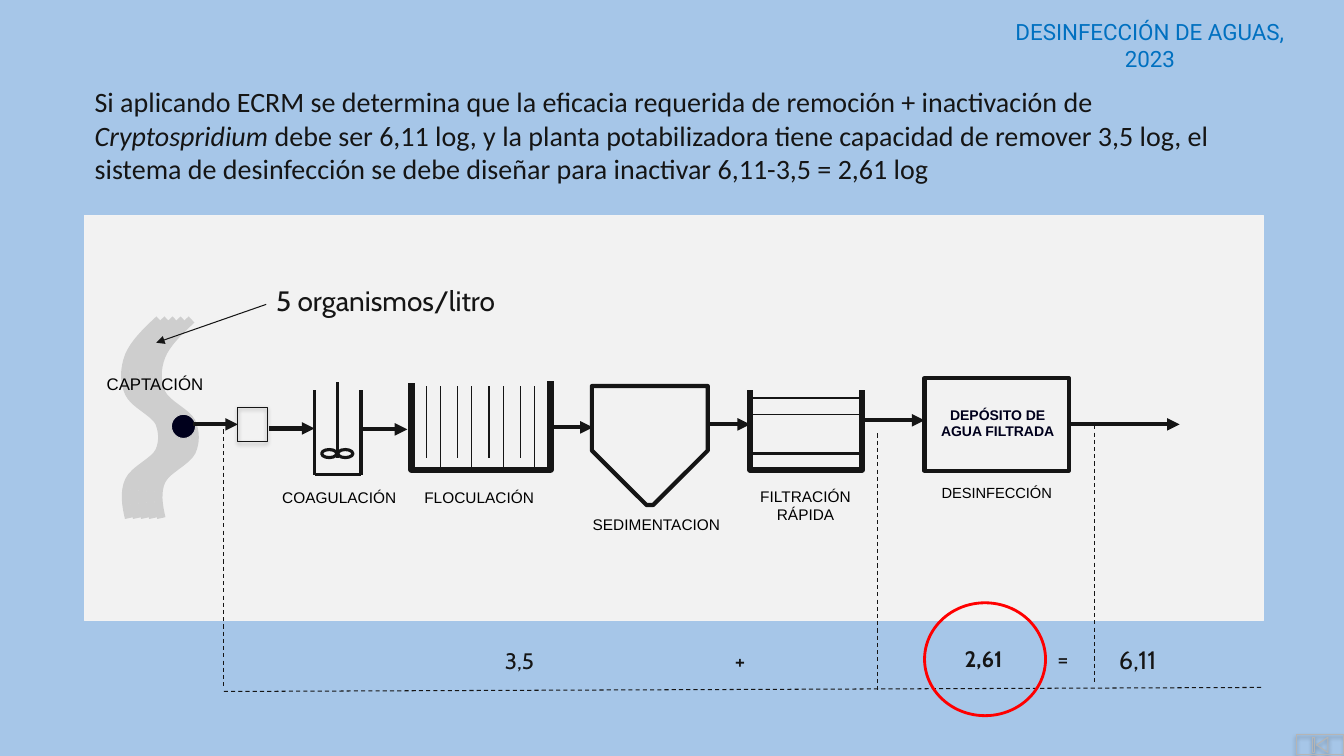
from lxml import etree
from pptx import Presentation
from pptx.dml.color import RGBColor
from pptx.enum import dml, shapes, text
from pptx.oxml import ns
from pptx.util import Inches, Pt

INK = "151515"
BLACK = "000000"
NAVY = "00001C"
RIVER = "CECECE"
PRESET = shapes.MSO_SHAPE
CENTER = text.PP_ALIGN.CENTER


def color(value):
    return RGBColor.from_string(value)


def add_element(parent, tag, **attributes):
    return etree.SubElement(parent, ns.qn(tag), attributes)


def style_outline(shape, line, width, fill=None):
    shape.shadow.inherit = False
    if fill:
        shape.fill.solid()
        shape.fill.fore_color.rgb = color(fill)
    else:
        shape.fill.background()
    shape.line.color.rgb = color(line)
    shape.line.width = Pt(width)


def add_box(slide, preset, bounds, width=0.75, line=INK, fill=None):
    shape = slide.shapes.add_shape(preset, *map(Inches, bounds))
    style_outline(shape, line, width, fill)
    return shape


def add_soft_shadow(shape):
    effects = shape._element.spPr.find(ns.qn("a:effectLst"))
    shadow = add_element(effects, "a:outerShdw", blurRad=str(Pt(3.1)), dist=str(Pt(1.6)),
                         dir="5400000", rotWithShape="0")
    shade = add_element(shadow, "a:srgbClr", val=BLACK)
    add_element(shade, "a:alpha", val="38000")


def add_line(slide, start, end, width=0.75, dashed=False, arrow=False):
    line = slide.shapes.add_connector(
        shapes.MSO_CONNECTOR.STRAIGHT, *map(Inches, (*start, *end)))
    line.line.color.rgb = color(INK)
    line.line.width = Pt(width)
    if dashed:
        line.line.dash_style = dml.MSO_LINE.DASH
    if arrow:
        add_element(line.line._get_or_add_ln(), "a:tailEnd", type="triangle")
    add_element(line._element.spPr, "a:effectLst")
    return line


def add_flow(slide, left, right, y):
    return add_line(slide, (left, y), (right, y), 3, arrow=True)


def add_outline(slide, points, width, line=INK):
    corners = [(Inches(x), Inches(y)) for x, y in points]
    builder = slide.shapes.build_freeform(*corners[0])
    builder.add_line_segments(corners[1:], close=False)
    shape = builder.convert_to_shape()
    style_outline(shape, line, width)
    return shape


def bend_into_curves(shape):
    outline = next(shape._element.iter(ns.qn("a:path")))
    segments = outline.findall(ns.qn("a:lnTo"))
    for start in range(0, len(segments), 3):
        curve = add_element(outline, "a:cubicBezTo")
        for segment in segments[start:start + 3]:
            curve.append(segment[0])
            outline.remove(segment)


def format_run(run, font, size, ink, bold=False, italic=False):
    run.font.name = font
    run.font.size = Pt(size)
    run.font.color.rgb = color(ink)
    run.font.bold = bold
    run.font.italic = italic


def add_label(slide, bounds, words, font, size, ink=INK, align=None, bold=False, tab=None):
    frame = slide.shapes.add_textbox(*map(Inches, bounds)).text_frame
    frame.word_wrap = True
    frame.text = words
    paragraph = frame.paragraphs[0]
    if align is not None:
        paragraph.alignment = align
    if tab:
        tabs = add_element(paragraph._p.get_or_add_pPr(), "a:tabLst")
        add_element(tabs, "a:tab", pos=str(Inches(tab)), algn="l")
    for run in paragraph.runs:
        format_run(run, font, size, ink, bold)
    return paragraph


def add_statement(slide):
    paragraph = add_label(
        slide, (0.84, 0.79, 11.69, 1.11),
        "Si aplicando ECRM se determina que la eficacia requerida de remoción + inactivación de ",
        "Calibri", 20)
    for words, italic in (
            ("Cryptospridium", True),
            (" debe ser 6,11 log, y la planta potabilizadora tiene capacidad de remover 3,5 log, "
             "el sistema de desinfección se debe diseñar para inactivar 6,11-3,5 = 2,61 log", False)):
        run = paragraph.add_run()
        run.text = words
        format_run(run, "Calibri", 20, INK, italic=italic)


def add_river(slide):
    bank = (
        (1.58, 3.17),
        (1.45, 3.29), (1.33, 3.41), (1.28, 3.53),
        (1.23, 3.66), (1.23, 3.79), (1.28, 3.9),
        (1.33, 4.01), (1.53, 4.09), (1.58, 4.19),
        (1.62, 4.29), (1.62, 4.39), (1.58, 4.48),
        (1.53, 4.58), (1.33, 4.66), (1.28, 4.77),
        (1.23, 4.88), (1.25, 5.01), (1.28, 5.14))
    for strand in (3, 4, 0, 1, 2):
        bend_into_curves(add_outline(slide, [(x + 0.08 * strand, y) for x, y in bank], 6, RIVER))
    add_box(slide, PRESET.OVAL, (1.7, 4.11, 0.24, 0.24), line=RIVER, fill=NAVY)


def add_coagulation(slide):
    add_line(slide, (3.12, 4.71), (3.58, 4.71), 2.25)
    for x in (3.12, 3.58):
        add_line(slide, (x, 3.87), (x, 4.71), 2.25)
    for x in (3.19, 3.35):
        add_box(slide, PRESET.OVAL, (x, 4.46, 0.15, 0.08), 2.25)
    add_line(slide, (3.35, 4.54), (3.35, 3.79), 2.25)


def add_flocculation(slide):
    for pair in range(4):
        x = 4.23 + 0.31 * pair
        add_line(slide, (x, 3.83), (x, 4.54))
        add_line(slide, (x + 0.14, 3.83), (x + 0.14, 4.66))
    add_outline(slide, [(4.08, 3.8), (4.08, 4.66), (5.46, 4.66), (5.46, 3.78)], 4.5)


def add_sedimentation(slide):
    tank = add_box(slide, PRESET.SNIP_2_SAME_RECTANGLE, (5.87, 3.83, 1.15, 1.18), 3)
    tank.rotation = 180
    tank.adjustments[0] = 0.471
    tank.adjustments[1] = 0


def add_filter(slide):
    for top, height, width in ((3.95, 0.55, 1), (4.5, 0.16, 2.25), (4.11, 0.39, 0.75)):
        add_box(slide, PRESET.RECTANGLE, (7.44, top, 1.1, height), width)
    add_outline(slide, [(7.44, 3.87), (7.44, 4.66), (8.55, 4.66), (8.55, 3.87)], 4.5)


def add_captions(slide):
    for bounds, words, size, align in (
            ((0.96, 3.66, 1.26, 0.3), "CAPTACIÓN", 12, None),
            ((2.7, 4.79, 1.42, 0.29), "COAGULACIÓN", 11, None),
            ((4.11, 4.79, 1.47, 0.29), "FLOCULACIÓN", 11, None),
            ((5.78, 5.06, 1.66, 0.29), "SEDIMENTACION", 11, None),
            ((7.28, 4.78, 1.42, 0.47), "FILTRACIÓN RÁPIDA", 11, CENTER),
            ((9.24, 4.75, 1.34, 0.28), "DESINFECCIÓN", 10.5, None)):
        add_label(slide, bounds, words, "Arial", size, BLACK, align)


def add_balance(slide):
    add_label(slide, (4.91, 6.37, 3.79, 0.37), "3,5\t+", "Cabin", 16, tab=2.28)
    paragraph = add_label(slide, (9.47, 6.35, 1.5, 0.37), "2,61", "Cabin", 16, bold=True, tab=0.92)
    equals = paragraph.add_run()
    equals.text = "\t="
    format_run(equals, "Cabin", 16, INK)
    add_label(slide, (11, 6.34, 1.54, 0.4), "6,11", "Cabin", 18)
    add_line(slide, (2.22, 6.86), (12.53, 6.82), dashed=True)
    for x, top in ((2.22, 4.26), (8.7, 4.3), (10.86, 4.22)):
        add_line(slide, (x, top), (x, top + 2.56), dashed=True)
    add_box(slide, PRESET.OVAL, (9.17, 5.98, 1.2, 1.12), 2, "FF0000")


def main():
    presentation = Presentation()
    presentation.slide_width = Inches(13.33)
    presentation.slide_height = Inches(7.5)
    slide = presentation.slides.add_slide(presentation.slide_layouts[6])
    slide.background.fill.solid()
    slide.background.fill.fore_color.rgb = color("A6C6E8")

    add_soft_shadow(add_box(slide, PRESET.ACTION_BUTTON_BEGINNING, (12.86, 7.29, 0.47, 0.2), line="B5B5B5"))
    add_label(slide, (9.82, 0.13, 3.17, 0.37), "DESINFECCIÓN DE AGUAS, 2023", "Roboto", 16, "0070C0", CENTER)
    add_box(slide, PRESET.RECTANGLE, (0.84, 2.14, 11.69, 4.02), line="F3F3F3", fill="F2F2F2")
    add_river(slide)
    add_coagulation(slide)
    add_filter(slide)
    intake = add_box(slide, PRESET.RECTANGLE, (2.36, 4.04, 0.29, 0.34))
    add_soft_shadow(intake)
    reservoir = add_box(slide, PRESET.RECTANGLE, (9.17, 3.75, 1.43, 0.92), 3)
    add_label(slide, (9.18, 3.98, 1.43, 0.44), "DEPÓSITO DE AGUA FILTRADA", "Arial", 10, NAVY, CENTER, True)
    add_flocculation(slide)
    add_sedimentation(slide)
    add_captions(slide)
    for left, right, y in ((2.67, 3.12, 4.25), (3.59, 4.04, 4.26), (5.47, 5.88, 4.24),
                           (7.03, 7.44, 4.21), (8.52, 9.17, 4.17)):
        add_flow(slide, left, right, y)
    add_flow(slide, 1.91, 2.36, 4.21).end_connect(intake, 1)
    add_flow(slide, 10.6, 11.7, 4.21).begin_connect(reservoir, 3)
    add_label(slide, (2.64, 2.76, 2.83, 0.44), "5 organismos/litro", "Cabin", 20)
    add_line(slide, (2.64, 3.02), (1.55, 3.4), arrow=True)
    add_balance(slide)
    add_statement(slide)
    presentation.save("out.pptx")


if __name__ == "__main__":
    main()
